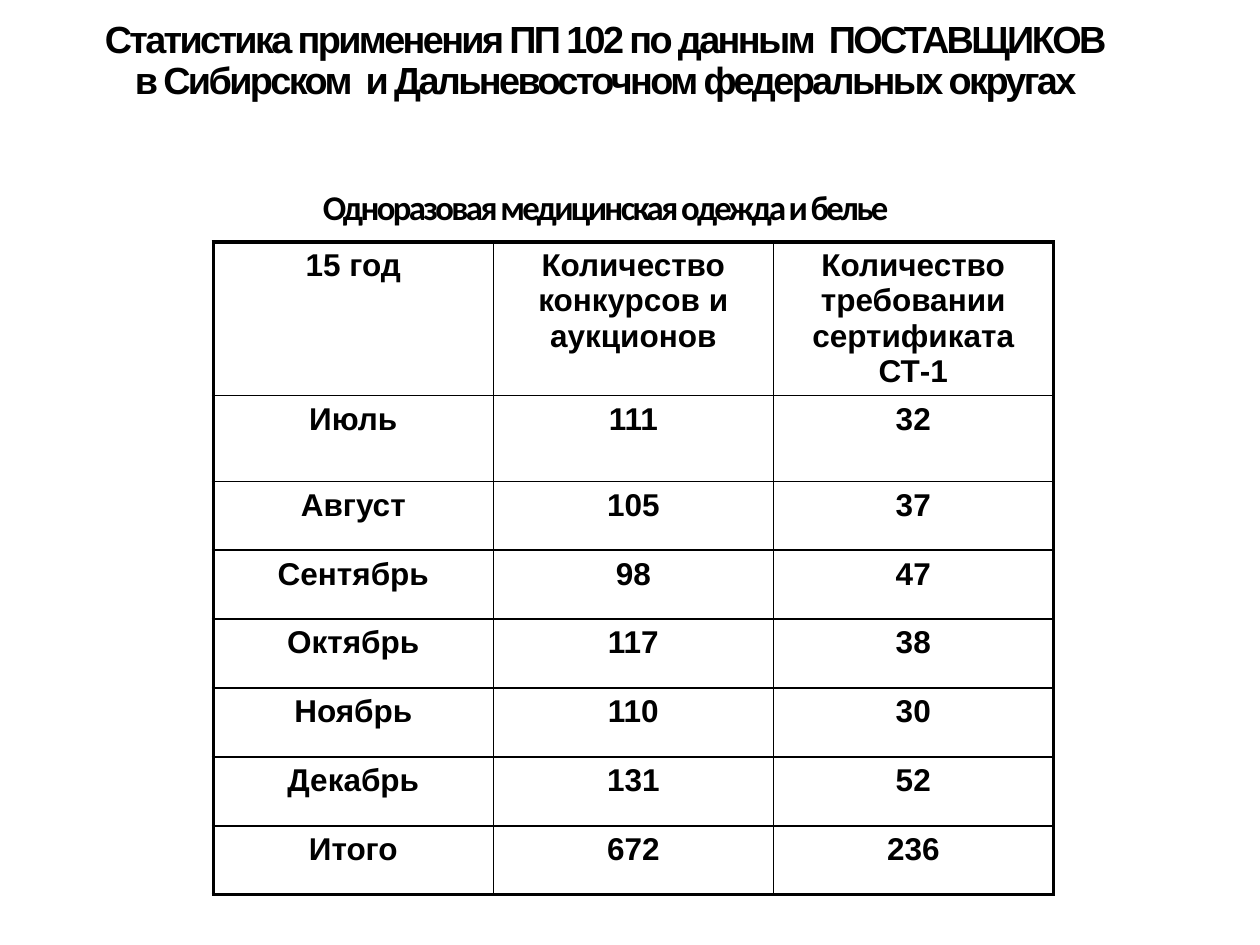
from lxml import etree
from pptx import Presentation
from pptx import util as u
from pptx.dml.color import RGBColor
from pptx.enum import text
from pptx.oxml import ns

HEADING = "Статистика применения ПП 102 по данным  ПОСТАВЩИКОВ\vв Сибирском  и Дальневосточном федеральных округах"
SUBHEADING = "Одноразовая медицинская одежда и белье"
ROWS = [
    ("15 год", "Количество конкурсов и аукционов", "Количество требовании сертификата СТ-1"),
    ("Июль", "111", "32"),
    ("Август", "105", "37"),
    ("Сентябрь", "98", "47"),
    ("Октябрь", "117", "38"),
    ("Ноябрь", "110", "30"),
    ("Декабрь", "131", "52"),
    ("Итого", "672", "236"),
]
THEME = {
    "ink": "000000",
    "heading": ("Arial", 21.6),
    "subheading": ("Calibri", 19.8),
    "cell": ("Arial", 18),
    "tracking": -1.5,
    "outer": 2.25,
    "inner": 1,
}
SLIDE = (720, 540)
TITLE_BOX = (0, -25, 692, 159)
TITLE_INSET = 37
SUBHEADING_GAP = 50
TABLE_ORIGIN = (121.9, 138.2)
COLUMN_WIDTH = 160
HEADER_HEIGHT, FIRST_HEIGHT, ROW_HEIGHT = 83.5, 49, 39.4


def style(para, role):
    name, size = THEME[role]
    para.alignment = text.PP_ALIGN.CENTER
    para.font.name = name
    para.font.size = u.Pt(size)
    para.font.bold = True
    para.font.color.rgb = RGBColor.from_string(THEME["ink"])


def add_title(page):
    box = page.shapes.title
    box.left, box.top, box.width, box.height = map(u.Pt, TITLE_BOX)
    frame = box.text_frame
    frame.word_wrap = True
    frame.auto_size = text.MSO_AUTO_SIZE.NONE
    frame.vertical_anchor = text.MSO_ANCHOR.TOP
    frame.margin_left = frame.margin_right = frame.margin_bottom = 0
    frame.margin_top = u.Pt(TITLE_INSET)
    frame.text = HEADING
    frame.add_paragraph().text = SUBHEADING
    for para, role in zip(frame.paragraphs, ("heading", "subheading")):
        style(para, role)
        para.line_spacing = 0.9
        for span in para.runs:
            span.font._element.set("spc", str(int(THEME["tracking"] * 100)))
    frame.paragraphs[1].space_before = u.Pt(SUBHEADING_GAP)


def draw_borders(cell, outer_sides):
    properties = cell._tc.get_or_add_tcPr()
    for side in "LRTB":
        width = THEME["outer" if side in outer_sides else "inner"]
        line = etree.SubElement(properties, ns.qn(f"a:ln{side}"), w=str(u.Pt(width)))
        fill = etree.SubElement(line, ns.qn("a:solidFill"))
        etree.SubElement(fill, ns.qn("a:srgbClr"), val=THEME["ink"])


def add_statistics(page):
    row_count, column_count = len(ROWS), len(ROWS[0])
    heights = [HEADER_HEIGHT, FIRST_HEIGHT] + [ROW_HEIGHT] * (row_count - 2)
    table = page.shapes.add_table(
        row_count, column_count, *map(u.Pt, TABLE_ORIGIN),
        u.Pt(COLUMN_WIDTH * column_count), u.Pt(sum(heights)),
    ).table
    table.horz_banding = False
    table.first_row = False
    for column in table.columns:
        column.width = u.Pt(COLUMN_WIDTH)
    for r, (values, height) in enumerate(zip(ROWS, heights)):
        table.rows[r].height = u.Pt(height)
        for c, value in enumerate(values):
            cell = table.cell(r, c)
            cell.text = value
            style(cell.text_frame.paragraphs[0], "cell")
            edges = {"L": c == 0, "R": c == column_count - 1, "T": r == 0, "B": r == row_count - 1}
            draw_borders(cell, [side for side, outer in edges.items() if outer])
            cell.fill.background()


def main():
    deck = Presentation()
    deck.slide_width, deck.slide_height = map(u.Pt, SLIDE)
    page = deck.slides.add_slide(deck.slide_layouts.get_by_name("Title Only"))
    add_title(page)
    add_statistics(page)
    deck.save("out.pptx")


if __name__ == "__main__":
    main()
